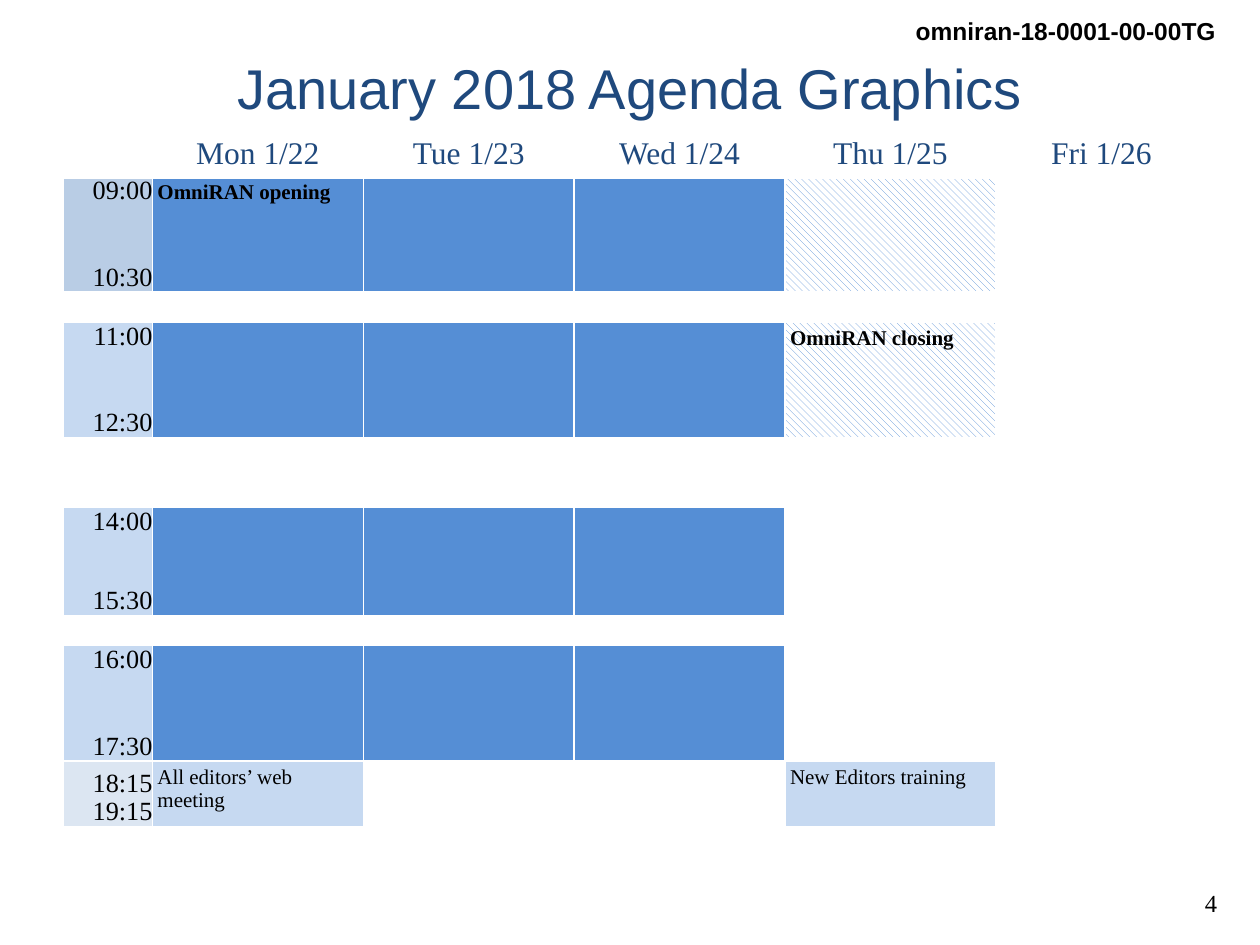
from dataclasses import dataclass
from lxml import etree
from pptx import Presentation
from pptx.dml.color import RGBColor
from pptx.enum.dml import MSO_PATTERN
from pptx.enum.text import MSO_ANCHOR, MSO_AUTO_SIZE, PP_ALIGN
from pptx.oxml.ns import qn
from pptx.util import Inches, Pt

LEFT, CENTER, RIGHT = PP_ALIGN.LEFT, PP_ALIGN.CENTER, PP_ALIGN.RIGHT
TOP, MIDDLE, BOTTOM = MSO_ANCHOR.TOP, MSO_ANCHOR.MIDDLE, MSO_ANCHOR.BOTTOM
WIDE_DIAGONAL = MSO_PATTERN.WIDE_DOWNWARD_DIAGONAL
SANS, SERIF = "Arial", "Times New Roman"
COLORS = {
    "white": "FFFFFF", "black": "000000", "navy": "1F497D", "session": "558ED5",
    "morning": "B9CDE5", "pale": "C6D9F1", "evening": "DCE6F2",
}
DAYS = ["Mon 1/22", "Tue 1/23", "Wed 1/24", "Thu 1/25", "Fri 1/26"]
TABLE_WIDTH, TIME_WIDTH = 9.08, 0.71
SLOT, BREAK = 0.91, 0.24
ROW_HEIGHTS = [0.32, SLOT, BREAK, SLOT, BREAK, 0.31, 0.86, BREAK, SLOT, 0.46, 0.06]
# First row, first column, last row, last column
MERGES = [(1, 5, 3, 5), (5, 5, 8, 5), (6, 4, 8, 4)]
MERGES += [(first, column, first + 1, column) for first in (4, 9) for column in range(5)]


@dataclass
class TimeSlot:
    row: int
    start: str
    end: str
    color: str
    gap: float = 0
    anchor: MSO_ANCHOR = TOP


@dataclass
class Event:
    row: int
    column: int
    text: str
    bold: bool = False


TIME_SLOTS = [
    TimeSlot(1, "09:00", "10:30", "morning", 33),
    TimeSlot(3, "11:00", "12:30", "pale", 33),
    TimeSlot(6, "14:00", "15:30", "pale", 29),
    TimeSlot(8, "16:00", "17:30", "pale", 33),
    TimeSlot(9, "18:15", "19:15", "evening", anchor=BOTTOM),
]
EVENTS = [
    Event(1, 1, "OmniRAN opening", True),
    Event(3, 4, "OmniRAN closing", True),
    Event(9, 1, "All editors’ web meeting"),
    Event(9, 4, "New Editors training"),
]


def rgb(name: str) -> RGBColor:
    return RGBColor.from_string(COLORS[name])


def write(text_frame, text: str, size: float, align, font: str = SERIF,
          color: str = "black", bold: bool = False, spacing: float = 0) -> None:
    text_frame.text = text
    for paragraph in text_frame.paragraphs:
        paragraph.alignment = align
        if spacing:
            paragraph.line_spacing = Pt(spacing)
        for run in paragraph.runs:
            run.font.name, run.font.size, run.font.bold = font, Pt(size), bold
            run.font.color.rgb = rgb(color)


def set_margins(cell, inches: float) -> None:
    cell.margin_left = cell.margin_right = Inches(inches)
    cell.margin_top = cell.margin_bottom = Inches(inches)


def fill_cell(cell, color: str) -> None:
    cell.fill.solid()
    cell.fill.fore_color.rgb = rgb(color)


def hatch_cell(cell) -> None:
    cell.fill.patterned()
    cell.fill.pattern = WIDE_DIAGONAL
    cell.fill.fore_color.rgb = rgb("session")
    cell.fill.back_color.rgb = rgb("white")


def set_borders(cell, bottom: float) -> None:
    """Draw white borders, one point wide except for the bottom one."""
    properties = cell._tc.get_or_add_tcPr()
    for index, (side, width) in enumerate(zip("LRTB", (1, 1, 1, bottom))):
        line = etree.Element(qn(f"a:ln{side}"), w=str(Pt(width)))
        solid = etree.SubElement(line, qn("a:solidFill"))
        etree.SubElement(solid, qn("a:srgbClr"), val=COLORS["white"])
        properties.insert(index, line)


def keep_row_low(cell) -> None:
    """Give an empty cell a tiny text size, so that it does not stretch its row."""
    etree.SubElement(cell.text_frame.paragraphs[0]._p, qn("a:endParaRPr"), sz="100")


def add_agenda(slide) -> None:
    frame = slide.shapes.add_table(
        len(ROW_HEIGHTS), len(DAYS) + 1, Inches(0.5), Inches(1.08),
        Inches(TABLE_WIDTH), Inches(sum(ROW_HEIGHTS)))
    table = frame.table
    table.first_row = table.horz_banding = False
    for row, height in zip(table.rows, ROW_HEIGHTS):
        row.height = Inches(height)
    day_width = (TABLE_WIDTH - TIME_WIDTH) / len(DAYS)
    for index, column in enumerate(table.columns):
        column.width = Inches(day_width if index else TIME_WIDTH)

    for cell in table.iter_cells():
        set_margins(cell, 0)
        fill_cell(cell, "white")
    for column, day in enumerate(DAYS, start=1):
        write(table.cell(0, column).text_frame, day, 18, CENTER, color="navy")

    for slot in TIME_SLOTS:
        cell = table.cell(slot.row, 0)
        fill_cell(cell, slot.color)
        cell.vertical_anchor = slot.anchor
        write(cell.text_frame, f"{slot.start}\n{slot.end}", 15, RIGHT, spacing=16.5)
        cell.text_frame.paragraphs[1].space_before = Pt(slot.gap)
        if slot.anchor == TOP:
            for column in range(1, 4):
                fill_cell(table.cell(slot.row, column), "session")
    for row in (1, 3):
        hatch_cell(table.cell(row, 4))

    for event in EVENTS:
        cell = table.cell(event.row, event.column)
        set_margins(cell, 0.04)
        write(cell.text_frame, event.text, 12, LEFT, bold=event.bold, spacing=13.2)
        if not event.bold:
            fill_cell(cell, "pale")

    for row, cells in enumerate(table.rows):
        for cell in cells.cells:
            set_borders(cell, 1 if row else 3)
            if not cell.text_frame.text:
                keep_row_low(cell)
    for top, left, bottom, right in MERGES:
        table.cell(top, left).merge(table.cell(bottom, right))


def add_label(slide, text: str, left: float, top: float, width: float,
              font: str, bold: bool) -> None:
    box = slide.shapes.add_textbox(Inches(left), Inches(top), Inches(width), Inches(0.34))
    box.text_frame.word_wrap = False
    write(box.text_frame, text, 14, RIGHT, font, bold=bold)


def main() -> None:
    presentation = Presentation()
    presentation.slide_width, presentation.slide_height = Inches(10), Inches(7.5)
    slide = presentation.slides.add_slide(presentation.slide_layouts[5])
    add_label(slide, "omniran-18-0001-00-00TG", 7.16, 0.08, 2.59, SANS, True)
    add_label(slide, "4", 9.33, 7, 0.43, SERIF, False)

    title = slide.shapes.title
    title.left, title.top = Inches(0.5), Inches(0.3)
    title.width, title.height = Inches(9), Inches(0.78)
    title.text_frame.auto_size = MSO_AUTO_SIZE.NONE
    title.text_frame.vertical_anchor = MIDDLE
    write(title.text_frame, "January 2018 Agenda Graphics", 32, CENTER, SANS, "navy")

    add_agenda(slide)
    presentation.save("out.pptx")


if __name__ == "__main__":
    main()
